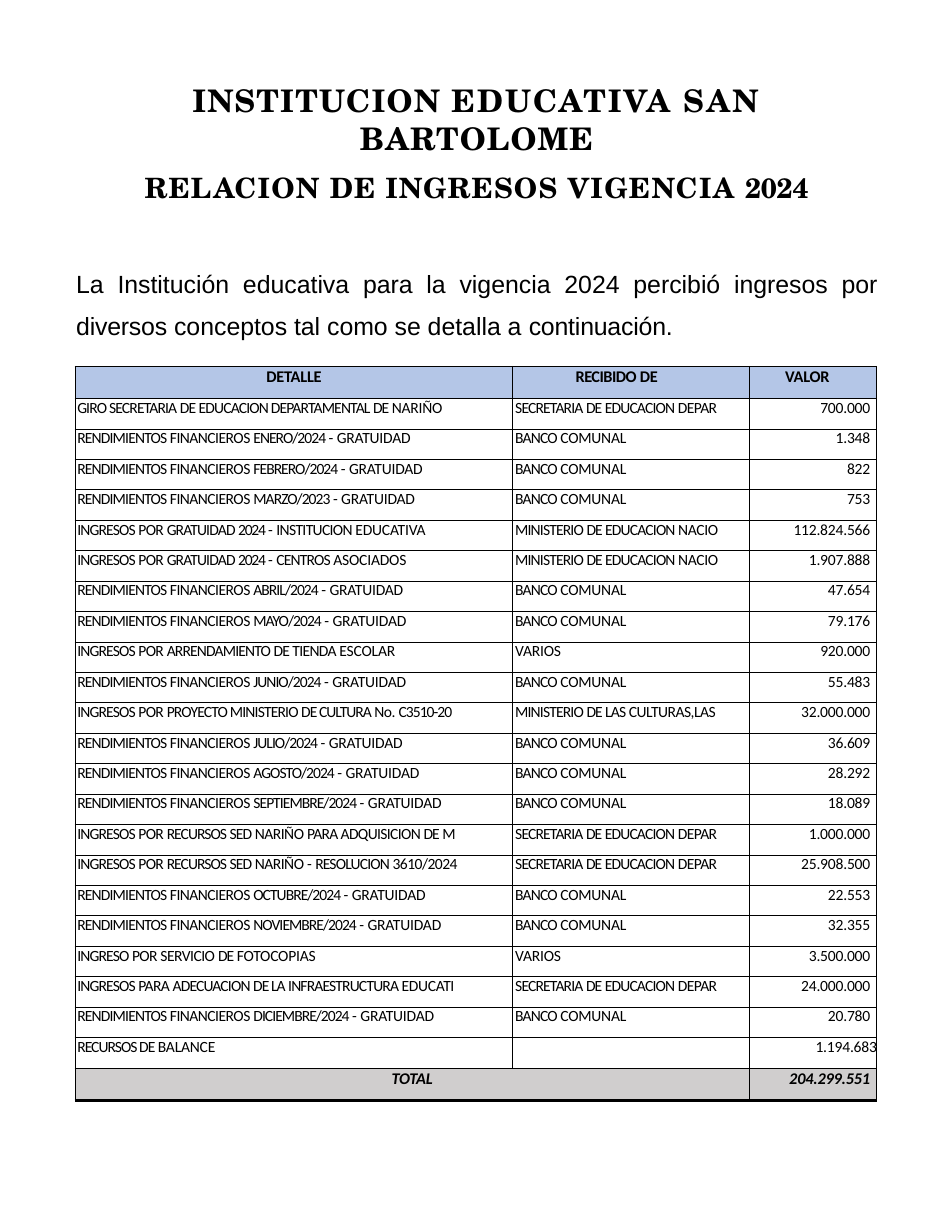
from itertools import groupby
from pptx import Presentation
from pptx import util as u
from pptx.dml.color import RGBColor
from pptx.enum import text
from pptx.oxml import parse_xml
from pptx.oxml.ns import nsdecls

BLACK = RGBColor(0x00, 0x00, 0x00)
HEADER_BLUE = RGBColor(0xB4, 0xC6, 0xE7)
TOTAL_GRAY = RGBColor(0xD0, 0xCE, 0xCE)
CENTER, RIGHT, LEFT, JUSTIFY = (
    text.PP_ALIGN.CENTER, text.PP_ALIGN.RIGHT, text.PP_ALIGN.LEFT, text.PP_ALIGN.JUSTIFY)

HEADING = {"name": "TeX Gyre Schola", "size": u.Pt(20), "bold": True}
SUBHEADING = {**HEADING, "size": u.Pt(18)}
INTRO = {"name": "Arial", "size": u.Pt(16), "bold": False}
DETAIL = {"name": "Calibri", "size": u.Pt(10), "bold": False}
HEADER = {"name": "Calibri", "size": u.Pt(10.5), "bold": True}
TOTAL = {**HEADER, "italic": True}

WORD_SPACING = {
    "DE": -0.6, "LA": -0.6, "POR": -0.4, "PARA": -0.4, "FINANCIEROS": -0.3, "-": 0,
    "2024": -0.8, "INSTITUCION": -0.4, "TIENDA": -0.4, "RECURSOS": -0.6, "CULTURA": -0.6,
    "No.": -0.3, "NARIÑO": -0.3, "ADQUISICION": -0.4, "SERVICIO": -0.3}
LAST_WORD_SPACING = {
    "DEPAR": -0.3, "NACIO": -0.2, "M": -0.5, "EDUCATI": -0.2, "C3510-20": -0.6,
    "3610/2024": -0.3, "CULTURAS,LAS": -0.3}

SECRETARIA = "SECRETARIA DE EDUCACION DEPAR"
MINISTERIO = "MINISTERIO DE EDUCACION NACIO"
BANCO = "BANCO COMUNAL"
INTEREST = "RENDIMIENTOS FINANCIEROS {} - GRATUIDAD"
INCOME = [
    ("GIRO SECRETARIA DE EDUCACION DEPARTAMENTAL DE NARIÑO", SECRETARIA, "700.000"),
    (INTEREST.format("ENERO/2024"), BANCO, "1.348"),
    (INTEREST.format("FEBRERO/2024"), BANCO, "822"),
    (INTEREST.format("MARZO/2023"), BANCO, "753"),
    ("INGRESOS POR GRATUIDAD 2024 - INSTITUCION EDUCATIVA", MINISTERIO, "112.824.566"),
    ("INGRESOS POR GRATUIDAD 2024 - CENTROS ASOCIADOS", MINISTERIO, "1.907.888"),
    (INTEREST.format("ABRIL/2024"), BANCO, "47.654"),
    (INTEREST.format("MAYO/2024"), BANCO, "79.176"),
    ("INGRESOS POR ARRENDAMIENTO DE TIENDA ESCOLAR", "VARIOS", "920.000"),
    (INTEREST.format("JUNIO/2024"), BANCO, "55.483"),
    ("INGRESOS POR PROYECTO MINISTERIO DE CULTURA No. C3510-20",
     "MINISTERIO DE LAS CULTURAS,LAS", "32.000.000"),
    (INTEREST.format("JULIO/2024"), BANCO, "36.609"),
    (INTEREST.format("AGOSTO/2024"), BANCO, "28.292"),
    (INTEREST.format("SEPTIEMBRE/2024"), BANCO, "18.089"),
    ("INGRESOS POR RECURSOS SED NARIÑO PARA ADQUISICION DE M", SECRETARIA, "1.000.000"),
    ("INGRESOS POR RECURSOS SED NARIÑO - RESOLUCION 3610/2024", SECRETARIA, "25.908.500"),
    (INTEREST.format("OCTUBRE/2024"), BANCO, "22.553"),
    (INTEREST.format("NOVIEMBRE/2024"), BANCO, "32.355"),
    ("INGRESO POR SERVICIO DE FOTOCOPIAS", "VARIOS", "3.500.000"),
    ("INGRESOS PARA ADECUACION DE LA INFRAESTRUCTURA EDUCATI", SECRETARIA, "24.000.000"),
    (INTEREST.format("DICIEMBRE/2024"), BANCO, "20.780"),
    ("RECURSOS DE BALANCE", "", "1.194.683")]


def write(paragraph, runs, font_format, paragraph_format, left=0, right=0):
    for name, value in paragraph_format.items():
        setattr(paragraph, name, value)
    properties = paragraph._p.get_or_add_pPr()
    properties.set("marL", str(u.Inches(left)))
    properties.set("marR", str(u.Inches(right)))
    properties.set("indent", "0")
    for content, spacing in runs:
        run = paragraph.add_run()
        run.text = content
        for name, value in font_format.items():
            setattr(run.font, name, value)
        run.font.color.rgb = BLACK
        run._r.get_or_add_rPr().set("spc", str(round(spacing * 100)))


def spaced_runs(sentence):
    words = sentence.split()
    pairs = [(word + " ", WORD_SPACING.get(word, -0.6 if "/" in word else -0.5))
             for word in words[:-1]]
    pairs += [(word, LAST_WORD_SPACING.get(word, -0.1)) for word in words[-1:]]
    return [("".join(word for word, _ in group), spacing)
            for spacing, group in groupby(pairs, key=lambda pair: pair[1])]


presentation = Presentation()
presentation.slide_width = u.Inches(8.5)
presentation.slide_height = u.Inches(11)
slide = presentation.slides.add_slide(presentation.slide_layouts[5])

title = slide.shapes.title
for name, value in {"left": 0.67, "top": 0.58, "width": 7.17, "height": 2.11}.items():
    setattr(title, name, u.Inches(value))
frame = title.text_frame
for name, value in {
        "margin_left": 0, "margin_top": u.Inches(0.15), "margin_right": 0, "margin_bottom": 0,
        "word_wrap": True, "auto_size": text.MSO_AUTO_SIZE.NONE,
        "vertical_anchor": text.MSO_ANCHOR.TOP}.items():
    setattr(frame, name, value)

write(frame.paragraphs[0],
      [("INSTITUCION ", 0.8), ("EDUCATIVA ", 1.3), ("SAN ", 1.6), ("BARTOLOME", 0.7)],
      HEADING, {"alignment": CENTER, "space_before": u.Pt(11.1)})
write(frame.add_paragraph(),
      [("RELACION ", 0.8), ("DE ", 0.6), ("INGRESOS ", 0.8), ("VIGENCIA ", 0.9), ("2024", -0.2)],
      SUBHEADING, {"alignment": CENTER, "space_before": u.Pt(8.8)})
write(frame.add_paragraph(),
      [("La Institución educativa para la vigencia 2024 percibió ingresos por ", 0),
       ("diversos ", -0.1), ("conceptos tal como se detalla a ", 0), ("continuación.", -0.1)],
      INTRO, {"alignment": JUSTIFY, "line_spacing": 1.44, "space_before": u.Pt(33)}, left=0.01)

row_count = len(INCOME) + 2
table = slide.shapes.add_table(
    row_count, 3, u.Inches(0.67), u.Inches(3.27), u.Inches(7.17), u.Inches(6.56)).table
table.first_row = table.horz_banding = False
for column, width in zip(table.columns, (3.91, 2.11, 1.14)):
    column.width = u.Inches(width)
for row in table.rows:
    row.height = u.Inches((6.56 - 2 * 0.29) / len(INCOME))
table.rows[0].height = table.rows[row_count - 1].height = u.Inches(0.29)

fills = {0: HEADER_BLUE, row_count - 1: TOTAL_GRAY}
for row_index, row in enumerate(table.rows):
    for cell in row.cells:
        for side in ("left", "right", "bottom"):
            setattr(cell, f"margin_{side}", 0)
        cell.margin_top = u.Inches(0.01) if row_index in fills else 0
        for side in "LRTB":
            width = 1.5 if side == "B" and row_index == row_count - 1 else 0.75
            cell._tc.get_or_add_tcPr().append(parse_xml(
                f'<a:ln{side} {nsdecls("a")} w="{u.Pt(width)}"><a:solidFill>'
                f'<a:srgbClr val="{BLACK}"/></a:solidFill></a:ln{side}>'))
        if row_index in fills:
            cell.fill.solid()
            cell.fill.fore_color.rgb = fills[row_index]
        else:
            cell.fill.background()
        cell.text_frame.paragraphs[0]._p.get_or_add_endParaRPr().set("sz", "1000")

strong_line = {"line_spacing": u.Pt(12.5), "space_before": u.Pt(0.5)}
headers = [([("DETALLE", -0.1)], CENTER, 0),
           ([("RECIBIDO ", -0.3), ("DE", -0.2)], LEFT, 0.56),
           ([("VALOR", -0.1)], LEFT, 0.32)]
for cell, (runs, alignment, left) in zip(table.rows[0].cells, headers):
    write(cell.text_frame.paragraphs[0], runs, HEADER,
          {"alignment": alignment, **strong_line}, left=left)

for row_index, entry in enumerate(INCOME, 1):
    value_margin = 0 if row_index == len(INCOME) else 0.06
    layouts = [(LEFT, 0.02, 0), (LEFT, 0.02, 0), (RIGHT, 0, value_margin)]
    for column_index, (content, (alignment, left, right)) in enumerate(zip(entry, layouts)):
        write(table.cell(row_index, column_index).text_frame.paragraphs[0],
              spaced_runs(content), DETAIL,
              {"alignment": alignment, "space_before": u.Pt(0.3)}, left, right)

total_cell = table.cell(row_count - 1, 0)
total_cell.merge(table.cell(row_count - 1, 1))
write(total_cell.text_frame.paragraphs[0], [("TOTAL", -0.1)], TOTAL,
      {"alignment": CENTER, **strong_line})
write(table.cell(row_count - 1, 2).text_frame.paragraphs[0], [("204.299.551", -0.1)], TOTAL,
      {"alignment": RIGHT, **strong_line}, right=0.06)

presentation.save("out.pptx")
